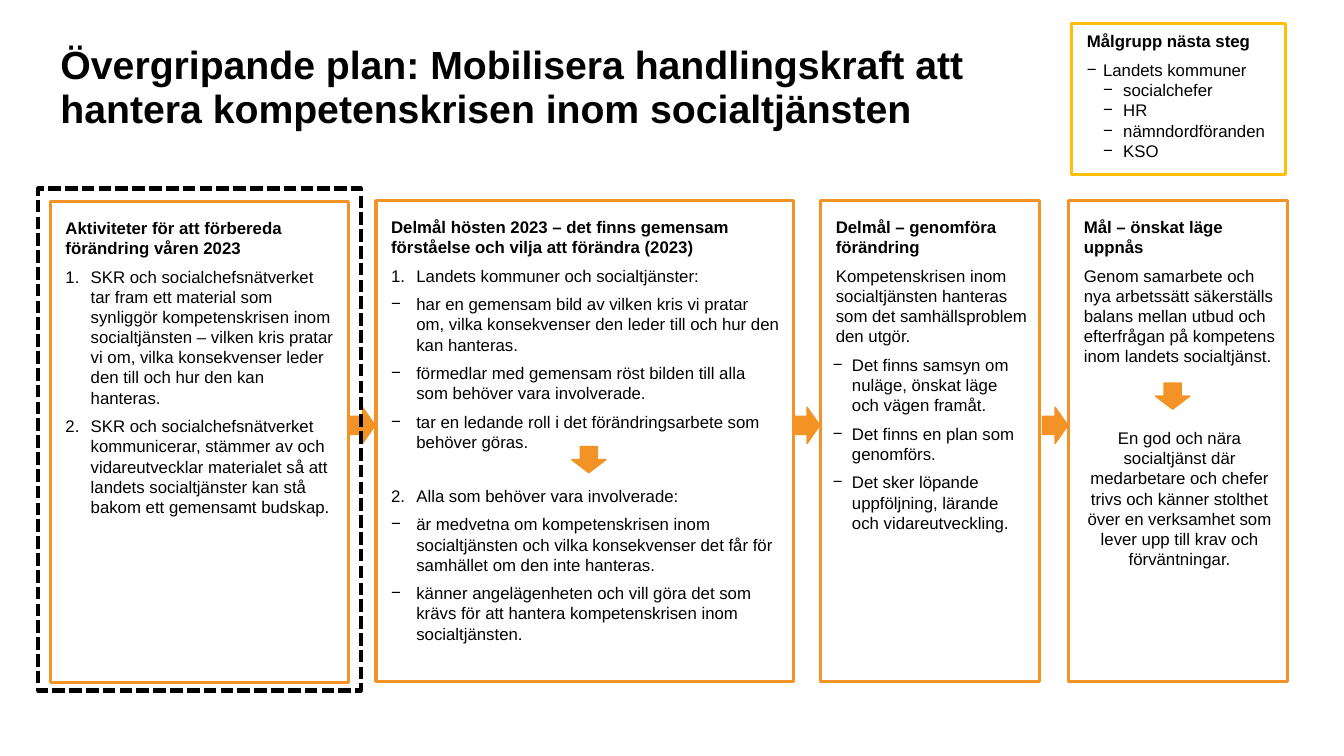
from dataclasses import dataclass
from lxml.etree import SubElement
from pptx import Presentation
from pptx.dml.color import RGBColor
from pptx.enum.dml import MSO_LINE_DASH_STYLE as Dash
from pptx.enum.shapes import MSO_SHAPE as Shape
from pptx.enum.text import MSO_ANCHOR as Anchor, PP_ALIGN as Align
from pptx.oxml.ns import qn
from pptx.util import Inches, Pt

# Content: each paragraph is (style, text), with its space after where it differs
TITLE = ("Övergripande plan: Mobilisera handlingskraft att "
         "hantera kompetenskrisen inom socialtjänsten")

AUDIENCE = [
    ("head", "Målgrupp nästa steg"),
    ("group", "Landets kommuner"),
    ("member", "socialchefer"),
    ("member", "HR"),
    ("member", "nämndordföranden"),
    ("member", "KSO"),
]

ACTIVITIES = [
    ("head", "Aktiviteter för att förbereda förändring våren 2023"),
    ("number", "SKR och socialchefsnätverket tar fram ett material som synliggör "
     "kompetenskrisen inom socialtjänsten – vilken kris pratar vi om, vilka "
     "konsekvenser leder den till och hur den kan hanteras."),
    ("number", "SKR och socialchefsnätverket kommunicerar, stämmer av och "
     "vidareutvecklar materialet så att landets socialtjänster kan stå bakom "
     "ett gemensamt budskap."),
]

AUTUMN_GOAL = [
    ("head", "Delmål hösten 2023 – det finns gemensam förståelse och vilja "
     "att förändra (2023)"),
    ("number", "Landets kommuner och socialtjänster:"),
    ("dash", "har en gemensam bild av vilken kris vi pratar om, vilka "
     "konsekvenser den leder till och hur den kan hanteras."),
    ("dash", "förmedlar med gemensam röst bilden till alla som behöver vara "
     "involverade."),
    ("dash", "tar en ledande roll i det förändringsarbete som behöver göras.", 24),
    ("second", "Alla som behöver vara involverade:"),
    ("dash", "är medvetna om kompetenskrisen inom socialtjänsten och vilka "
     "konsekvenser det får för samhället om den inte hanteras."),
    ("dash", "känner angelägenheten och vill göra det som krävs för att hantera "
     "kompetenskrisen inom socialtjänsten."),
]

CHANGE_GOAL = [
    ("head", "Delmål – genomföra förändring"),
    ("plain", "Kompetenskrisen inom socialtjänsten hanteras som det "
     "samhällsproblem den utgör."),
    ("tight", "Det finns samsyn om nuläge, önskat läge och vägen framåt."),
    ("tight", "Det finns en plan som genomförs."),
    ("tight", "Det sker löpande uppföljning, lärande och vidareutveckling.", 12),
]

FINAL_GOAL = [
    ("head", "Mål – önskat läge uppnås"),
    ("plain", "Genom samarbete och nya arbetssätt säkerställs balans mellan utbud "
     "och efterfrågan på kompetens inom landets socialtjänst.", 44),
    ("centred", "En god och nära socialtjänst där medarbetare och chefer trivs "
     "och känner stolthet över en verksamhet som lever upp till krav och "
     "förväntningar.", 12),
]

# Style: left margin, hanging indent, bullet (a number is the first in a list), space after
STYLES = {
    "head": (0.03, 0, None, 6),
    "plain": (0.03, 0, None, 6),
    "centred": (0.03, 0, None, 6),
    "number": (0.28, 0.25, 1, 6),
    "second": (0.28, 0.25, 2, 6),
    "dash": (0.28, 0.25, "−", 6),
    "tight": (0.19, 0.19, "−", 6),
    "group": (0.19, 0.16, "−", 0),
    "member": (0.39, 0.2, "−", 0),
}

# Columns: left, top, width, paragraphs
COLUMN_HEIGHT = 4.77
COLUMNS = [
    (0.5, 2, 2.96, ACTIVITIES),
    (3.73, 1.99, 4.14, AUTUMN_GOAL),
    (8.14, 1.99, 2.17, CHANGE_GOAL),
    (10.6, 1.99, 2.17, FINAL_GOAL),
]
STEP_ARROW = (0.25, 0.36)
DOWN_ARROW = (0.26, 0.34)
DOWN_ARROW_PLACES = [(11.5, 3.76), (5.71, 4.39)]


@dataclass(frozen=True)
class Theme:
    font: str = "Arial"
    title_size: int = 28
    body_size: int = 12
    text: RGBColor = RGBColor(0, 0, 0)
    orange: RGBColor = RGBColor(0xF3, 0x93, 0x25)
    yellow: RGBColor = RGBColor(0xFF, 0xBE, 0x0A)


theme = Theme()
deck = Presentation()
deck.slide_width, deck.slide_height = Inches(13.33), Inches(7.5)
page = deck.slides.add_slide(deck.slide_layouts[5])


def set_font(para, size, bold):
    font = para.font
    font.name, font.size, font.bold = theme.font, Pt(size), bold
    font.color.rgb = theme.text


def set_margins(frame, left, top, right, bottom):
    frame.margin_left, frame.margin_top = Inches(left), Inches(top)
    frame.margin_right, frame.margin_bottom = Inches(right), Inches(bottom)
    frame.word_wrap = True
    frame.vertical_anchor = Anchor.TOP


def add_outline(kind, left, top, width, height, color, weight):
    shape = page.shapes.add_shape(
        kind, Inches(left), Inches(top), Inches(width), Inches(height))
    shape.shadow.inherit = False
    shape.fill.background()
    shape.line.color.rgb = color
    shape.line.width = Pt(weight)
    return shape


def add_arrow(left, top, size, rotation=0):
    arrow = add_outline(Shape.RIGHT_ARROW, left, top, *size, theme.orange, 1)
    arrow.fill.solid()
    arrow.fill.fore_color.rgb = theme.orange
    arrow.rotation = rotation


def format_para(para, style, text, space_after=None):
    margin, hanging, bullet, usual_space = STYLES[style]
    props = para._p.get_or_add_pPr()
    props.set("marL", str(Inches(margin)))
    props.set("indent", str(-Inches(hanging)))
    if isinstance(bullet, int):
        number = SubElement(props, qn("a:buAutoNum"), type="arabicPeriod")
        if bullet > 1:
            number.set("startAt", str(bullet))
    elif bullet:
        SubElement(props, qn("a:buFont"), typeface=theme.font)
        SubElement(props, qn("a:buChar"), char=bullet)
    para.text = text
    para.level = 1 if style == "member" else 0
    para.alignment = Align.CENTER if style == "centred" else Align.LEFT
    para.space_after = Pt(usual_space if space_after is None else space_after)
    set_font(para, theme.body_size, style == "head")


def add_text_box(left, top, width, height, color, margins, content):
    box = add_outline(Shape.RECTANGLE, left, top, width, height, color, 2.25)
    frame = box.text_frame
    set_margins(frame, *margins)
    for index, item in enumerate(content):
        para = frame.add_paragraph() if index else frame.paragraphs[0]
        format_para(para, *item)


# Title
title = page.shapes.title
title.left, title.top = Inches(0.5), Inches(0.38)
title.width, title.height = Inches(9.38), Inches(1.35)
set_margins(title.text_frame, 0.1, 0.05, 0.1, 0.05)
title.text_frame.text = TITLE
heading = title.text_frame.paragraphs[0]
heading.alignment = Align.LEFT
heading.line_spacing = 0.95
set_font(heading, theme.title_size, True)

# Target group
add_text_box(10.63, 0.23, 2.12, 1.5, theme.yellow, (0.12, 0.08, 0.12, 0.04), AUDIENCE)

# Plan columns
for left, top, width, content in COLUMNS:
    add_text_box(left, top, width, COLUMN_HEIGHT, theme.orange,
                 (0.12, 0.16, 0.12, 0.08), content)

# Arrows between the columns and inside them
for left, *rest in COLUMNS[1:]:
    add_arrow(left - 0.26, 4.04, STEP_ARROW)
for left, top in DOWN_ARROW_PLACES:
    add_arrow(left, top, DOWN_ARROW, rotation=90)

# Dashed frame around the current step
frame_line = add_outline(Shape.RECTANGLE, 0.38, 1.87, 3.2, 4.98, theme.text, 3).line
frame_line.dash_style = Dash.SQUARE_DOT

deck.save("out.pptx")
